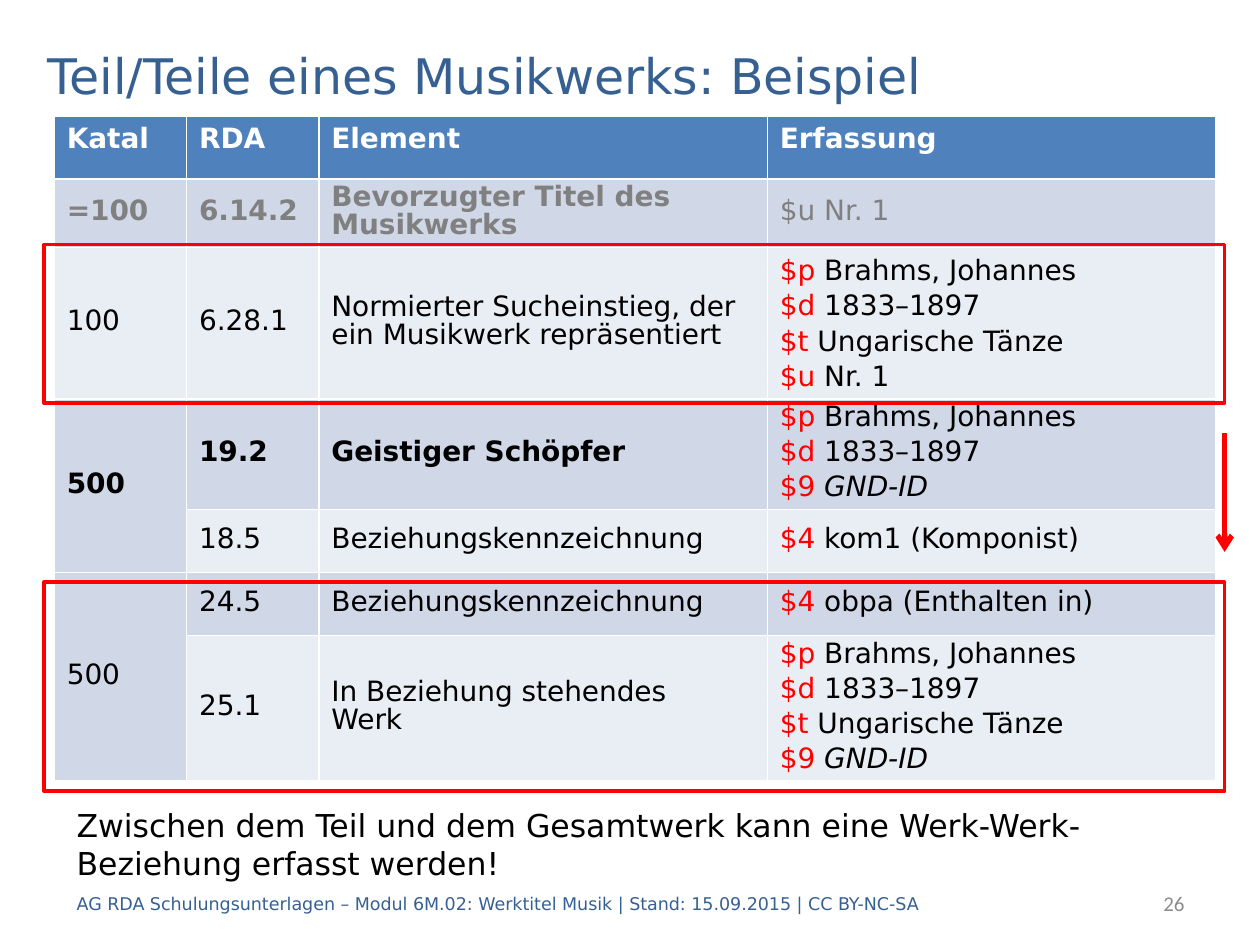
from lxml.etree import SubElement
from pptx import Presentation
from pptx.dml.color import RGBColor
from pptx.enum.shapes import MSO_CONNECTOR as Connector, MSO_SHAPE as Shape
from pptx.enum.text import MSO_ANCHOR as Anchor, PP_ALIGN as Align
from pptx.oxml.ns import qn
from pptx.util import Inches, Pt

FONT = "DejaVu Sans"
BLUE, HEADER, RED = "376092", "4F81BD", "FF0000"
BLACK, GREY, WHITE = "000000", "808080", "FFFFFF"
BANDS = ("D0D8E8", "E9EDF4")

COLUMNS = (1.05, 1.05, 3.56, 3.56)
ROW_HEIGHTS = (0.5, 0.53, 0.5, 0.5, 0.5, 0.5, 0.5)
HEADINGS = ("Katal", "RDA", "Element", "Erfassung")

COMPOSER = [("$p", "Brahms, Johannes"), ("$d", "1833–1897")]
WORK = COMPOSER + [("$t", "Ungarische Tänze")]
GND = [("$9", "GND-ID")]
# Catalogue field, RDA number, element, subfields, bold labels; None continues a merged field
ENTRIES = [
    ("=100", "6.14.2", "Bevorzugter Titel des Musikwerks", [("$u", "Nr. 1")], True),
    ("100", "6.28.1", "Normierter Sucheinstieg, der ein Musikwerk repräsentiert",
     WORK + [("$u", "Nr. 1")], False),
    ("500", "19.2", "Geistiger Schöpfer", COMPOSER + GND, True),
    (None, "18.5", "Beziehungskennzeichnung", [("$4", "kom1 (Komponist)")], False),
    ("500", "24.5", "Beziehungskennzeichnung", [("$4", "obpa (Enthalten in)")], False),
    (None, "25.1", "In Beziehung stehendes Werk", WORK + GND, False),
]


def rgb(color):
    return RGBColor.from_string(color)


def inches(*lengths):
    return [Inches(length) for length in lengths]


def add_run(paragraph, text, size, color, bold=False, italic=False, font=FONT):
    run = paragraph.add_run()
    run.text = text
    run.font.name, run.font.size = font, Pt(size)
    run.font.bold, run.font.italic = bold, italic
    run.font.color.rgb = rgb(color)


def fill_with(part, color):
    part.fill.solid()
    part.fill.fore_color.rgb = rgb(color)


def space_line(paragraph, line_spacing):
    paragraph.line_spacing = Pt(line_spacing)
    paragraph.space_before = paragraph.space_after = Pt(6)


def add_label(cell, text, color, bold):
    paragraph = cell.text_frame.paragraphs[0]
    space_line(paragraph, 16)
    add_run(paragraph, text, 16, color, bold)


def add_subfields(cell, subfields, code_color, value_color, first_spacing):
    frame = cell.text_frame
    for index, (code, value) in enumerate(subfields):
        paragraph = frame.add_paragraph() if index else frame.paragraphs[0]
        space_line(paragraph, 8 if index else first_spacing)
        add_run(paragraph, code, 16, code_color)
        add_run(paragraph, " " + value, 16, value_color, italic=value == "GND-ID")


def add_field_table(slide):
    holder = slide.shapes.add_table(len(ROW_HEIGHTS), len(COLUMNS),
                                    *inches(0.43, 0.92, 9.21, 5.26))
    table = holder.table
    for column, width in zip(table.columns, COLUMNS):
        column.width = Inches(width)
    for row, height in zip(table.rows, ROW_HEIGHTS):
        row.height = Inches(height)
    holder.height = Inches(5.26)

    for column, heading in enumerate(HEADINGS):
        cell = table.cell(0, column)
        fill_with(cell, HEADER)
        add_run(cell.text_frame.paragraphs[0], heading, 16, WHITE, bold=True)

    for row, (field, number, element, subfields, bold) in enumerate(ENTRIES, 1):
        inherited = field == "=100"
        text_color, code_color = (GREY, GREY) if inherited else (BLACK, RED)
        if field is None:
            table.cell(row - 1, 0).merge(table.cell(row, 0))
        for column in range(len(COLUMNS)):
            cell = table.cell(row, column)
            fill_with(cell, BANDS[(row - 1) % 2])
            cell.vertical_anchor = Anchor.MIDDLE
        for column, label in enumerate((field, number, element)):
            if label:
                add_label(table.cell(row, column), label, text_color, bold)
        table.cell(row, 2).margin_right = Inches(0.2)
        add_subfields(table.cell(row, 3), subfields, code_color, text_color,
                      19.2 if field == "100" else 16)


def add_text(slide, box, text, size, color, font=FONT, align=Align.LEFT):
    frame = slide.shapes.add_textbox(*inches(*box)).text_frame
    frame.word_wrap = True
    frame.vertical_anchor = Anchor.MIDDLE
    frame.paragraphs[0].alignment = align
    add_run(frame.paragraphs[0], text, size, color, font=font)


def add_rectangle(slide, box):
    rectangle = slide.shapes.add_shape(Shape.RECTANGLE, *inches(*box))
    rectangle.shadow.inherit = False
    return rectangle


def add_highlight(slide, top, height):
    highlight = add_rectangle(slide, (0.35, top, 9.37, height))
    highlight.fill.background()
    highlight.line.color.rgb = rgb(RED)
    highlight.line.width = Pt(2)


def add_arrow(slide, start, end):
    arrow = slide.shapes.add_connector(Connector.STRAIGHT, *inches(*start, *end))
    arrow.line.color.rgb = rgb(RED)
    arrow.line.width = Pt(3)
    SubElement(arrow.line._get_or_add_ln(), qn("a:tailEnd"), type="arrow")
    SubElement(arrow._element.spPr, qn("a:effectLst"))


def add_note(slide, box, text):
    note = add_rectangle(slide, box)
    fill_with(note, WHITE)
    note.line.fill.background()
    frame = note.text_frame
    frame.word_wrap = True
    frame.vertical_anchor = Anchor.TOP
    frame.paragraphs[0].alignment = Align.LEFT
    add_run(frame.paragraphs[0], text, 18, BLACK)


def set_title(slide, text):
    title = slide.shapes.title
    title.left, title.top, title.width, title.height = inches(0.28, 0.2, 9.45, 0.79)
    title.text_frame.vertical_anchor = Anchor.MIDDLE
    paragraph = title.text_frame.paragraphs[0]
    paragraph.alignment = Align.LEFT
    add_run(paragraph, text, 28, BLUE)


def main():
    deck = Presentation()
    deck.slide_width, deck.slide_height = inches(10, 7.5)
    slide = deck.slides.add_slide(deck.slide_layouts[5])

    set_title(slide, "Teil/Teile eines Musikwerks: Beispiel")
    add_field_table(slide)

    # Footer and page number
    add_text(slide, (0.51, 6.97, 8.35, 0.4),
             "AG RDA Schulungsunterlagen – Modul 6M.02: Werktitel Musik"
             " | Stand: 15.09.2015 | CC BY-NC-SA", 10, BLUE)
    add_text(slide, (7.91, 6.97, 1.59, 0.4), "26", 12, "8C8C8C", "Calibri", Align.RIGHT)

    # Part and whole work, joined by the arrow
    add_highlight(slide, 1.94, 1.26)
    add_highlight(slide, 4.62, 1.66)
    add_arrow(slide, (9.72, 3.44), (9.72, 4.38))

    add_note(slide, (0.51, 6.35, 9.06, 0.71),
             "Zwischen dem Teil und dem Gesamtwerk kann eine "
             "Werk-Werk-Beziehung erfasst werden!")
    deck.save("out.pptx")


if __name__ == "__main__":
    main()
